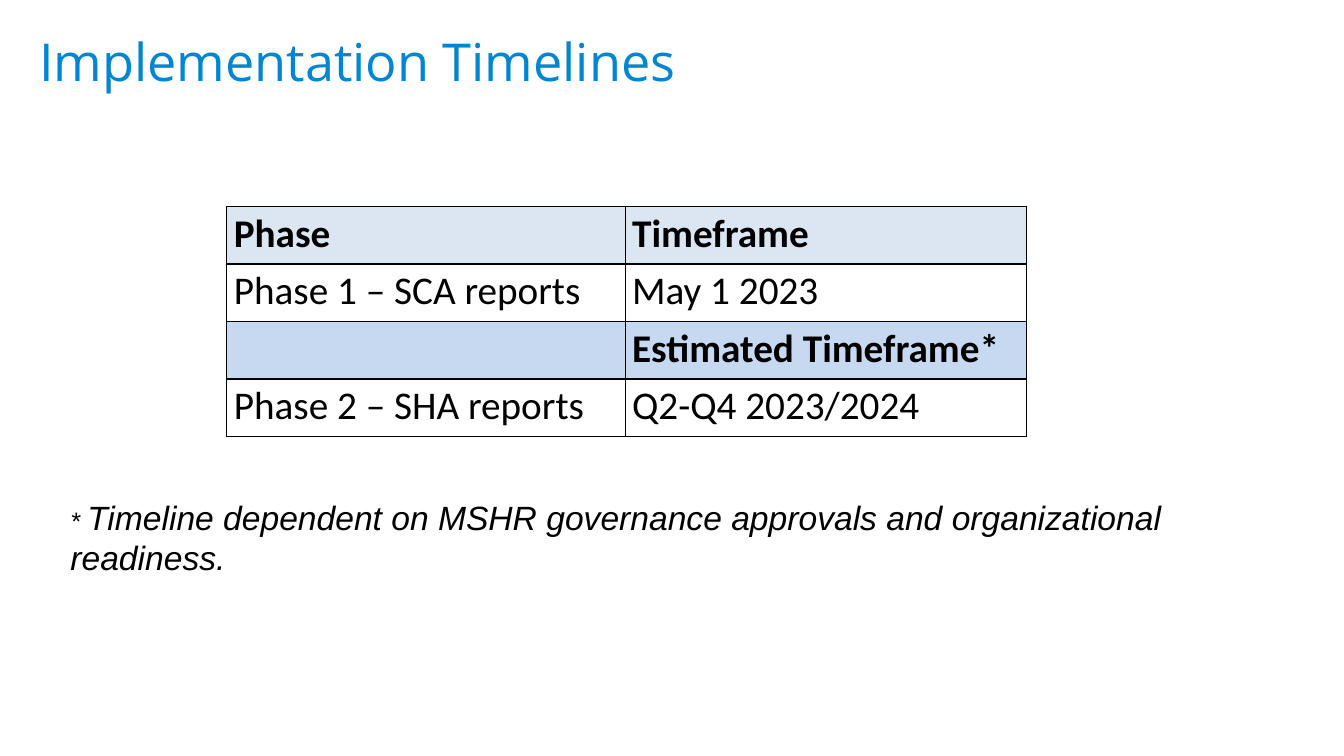
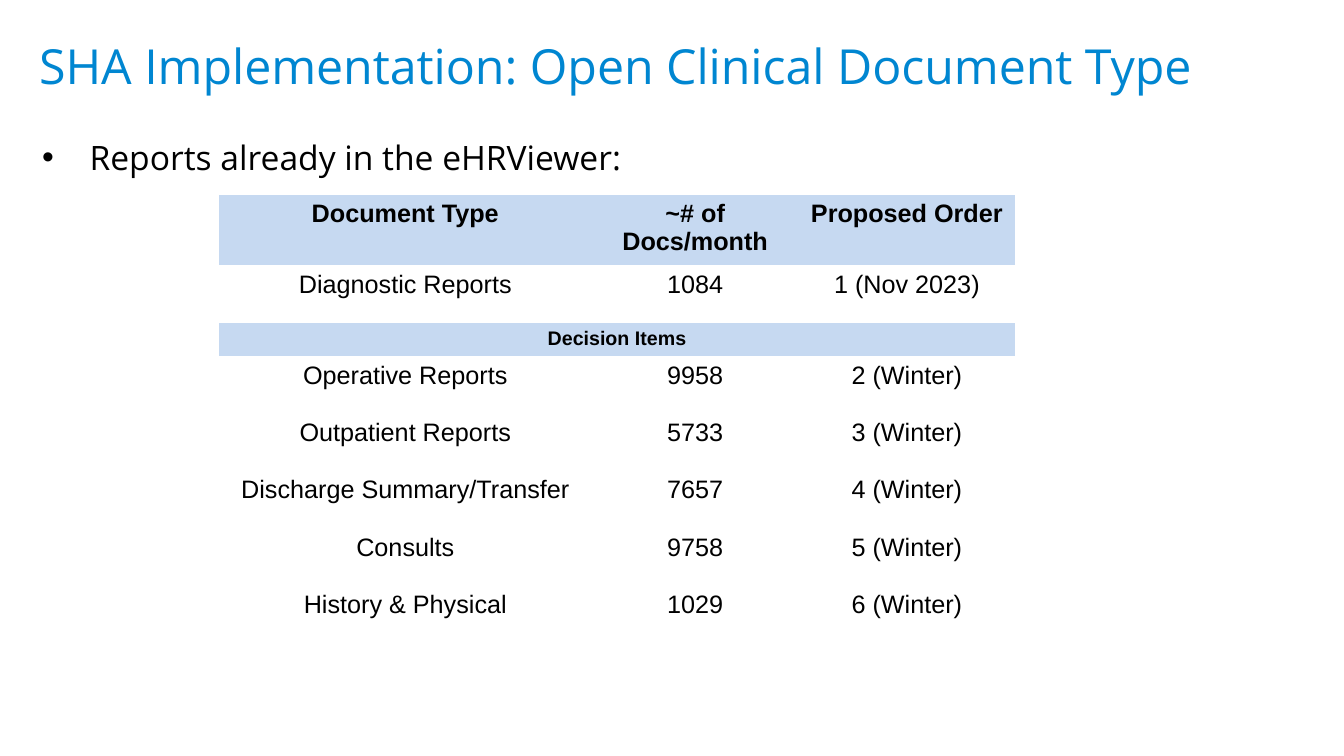
from dataclasses import dataclass

from lxml.etree import SubElement
from pptx import Presentation
from pptx.dml.color import RGBColor
from pptx.enum.text import MSO_ANCHOR as Anchor, PP_ALIGN as Align
from pptx.oxml.ns import qn
from pptx.util import Inches, Pt


@dataclass(frozen=True)
class Theme:
    """Colours, fonts and type sizes shared by the slides."""
    blue: str = "0086D1"
    black: str = "000000"
    pale: str = "DCE6F2"
    band: str = "C6D9F1"
    heading: str = "Open Sans"
    sans: str = "Arial"
    grid: str = "Calibri"
    body: float = 24
    phase: float = 28
    cell: float = 18
    section: float = 14


THEME = Theme()

PHASES = [
    ("Phase", "Timeframe"),
    ("Phase 1 – SCA reports", "May 1 2023"),
    ("", "Estimated Timeframe*"),
    ("Phase 2 – SHA reports", "Q2-Q4 2023/2024"),
]
PHASE_FILLS = {0: THEME.pale, 2: THEME.band}

DOCUMENTS = [
    ("Document Type", "~# of Docs/month", "Proposed Order"),
    ("Diagnostic Reports", "1084", "1 (Nov 2023)"),
    ("Decision Items",),
    ("Operative Reports", "9958", "2 (Winter)"),
    ("Outpatient Reports", "5733", "3 (Winter)"),
    ("Discharge Summary/Transfer", "7657", "4 (Winter)"),
    ("Consults", "9758", "5 (Winter)"),
    ("History & Physical", "1029", "6 (Winter)"),
]
DOCUMENT_FILLS = {0: THEME.band, 2: THEME.band}


def add_run(paragraph, text, size, face, color=THEME.black, bold=False, italic=False):
    """Append one formatted run."""
    run = paragraph.add_run()
    run.text = text
    font = run.font
    font.size, font.name, font.bold, font.italic = Pt(size), face, bold, italic
    font.color.rgb = RGBColor.from_string(color)


def add_text(slide, left, top, width, height, anchor=Anchor.TOP):
    """Add a wrapping text box and return its first paragraph."""
    frame = slide.shapes.add_textbox(*map(Inches, (left, top, width, height))).text_frame
    frame.word_wrap = True
    frame.vertical_anchor = anchor
    return frame.paragraphs[0]


def add_title(slide, text, size, spacing=1.0):
    """Add the slide title."""
    paragraph = add_text(slide, 0.29, 0.31, 12.72, 0.8)
    paragraph.line_spacing = spacing
    add_run(paragraph, text, size, THEME.heading, THEME.blue)


def add_bullet(slide, text):
    """Add the body text as a bullet with a hanging indent."""
    paragraph = add_text(slide, 0.29, 1.31, 12.72, 5.13)
    properties = paragraph._p.get_or_add_pPr()
    properties.set("marL", str(Inches(0.5)))
    properties.set("indent", str(Inches(-0.47)))
    SubElement(properties, qn("a:buFont"), typeface=THEME.sans)
    SubElement(properties, qn("a:buChar"), char="•")
    add_run(paragraph, text, THEME.body, THEME.heading)


def set_borders(cell, color):
    """Draw one-point cell borders, or none without a colour."""
    properties = cell._tc.get_or_add_tcPr()
    for position, side in enumerate(("lnL", "lnR", "lnT", "lnB")):
        line = SubElement(properties, qn(f"a:{side}"), w=str(Pt(1)))
        properties.insert(position, line)
        if color:
            fill = SubElement(line, qn("a:solidFill"))
            SubElement(fill, qn("a:srgbClr"), val=color)
        else:
            SubElement(line, qn("a:noFill"))


def style_cell(cell, fill, border):
    """Set the fill and borders of a cell."""
    if fill:
        cell.fill.solid()
        cell.fill.fore_color.rgb = RGBColor.from_string(fill)
    else:
        cell.fill.background()
    set_borders(cell, border)


def add_grid(slide, left, top, widths, heights, fills, border=None):
    """Add a table with filled header rows and return it."""
    box = map(Inches, (left, top, sum(widths), sum(heights)))
    table = slide.shapes.add_table(len(heights), len(widths), *box).table
    table.first_row = table.horz_banding = False
    for column, width in zip(table.columns, widths):
        column.width = Inches(width)
    for index, (row, height) in enumerate(zip(table.rows, heights)):
        row.height = Inches(height)
        for cell in row.cells:
            style_cell(cell, fills.get(index), border)
    return table


def add_phases(slide):
    """Add the table of phases and timeframes."""
    table = add_grid(slide, 2.25, 2.05, (3.95, 3.98), [0.57] * len(PHASES),
                     PHASE_FILLS, THEME.black)
    for r, values in enumerate(PHASES):
        for c, value in enumerate(values):
            cell = table.cell(r, c)
            cell.margin_left = cell.margin_right = Inches(0.07)
            cell.margin_top = cell.margin_bottom = 0
            paragraph = cell.text_frame.paragraphs[0]
            paragraph.line_spacing = 1.07
            if value:
                add_run(paragraph, value, THEME.phase, THEME.grid, bold=r in PHASE_FILLS)


def add_documents(slide):
    """Add the table of document types with its spanning section row."""
    heights = [0.67, 0.57, 0.28] + [0.57] * 5
    table = add_grid(slide, 2.17, 1.93, (3.7, 2.05, 2.15), heights, DOCUMENT_FILLS)
    for r, values in enumerate(DOCUMENTS):
        section = len(values) == 1
        if section:
            table.cell(r, 0).merge(table.cell(r, 2))
        for c, value in enumerate(values):
            paragraph = table.cell(r, c).text_frame.paragraphs[0]
            paragraph.alignment = Align.CENTER
            size = THEME.section if section else THEME.cell
            add_run(paragraph, value, size, THEME.sans, bold=r in DOCUMENT_FILLS)


def add_footnote(slide):
    """Add the note on the estimated timeframe."""
    paragraph = add_text(slide, 0.6, 4.93, 11.85, 0.8, Anchor.MIDDLE)
    add_run(paragraph, "* ", THEME.cell, THEME.sans, italic=True)
    add_run(paragraph, "Timeline dependent on MSHR governance approvals and "
            "organizational readiness.", THEME.body, THEME.sans, italic=True)


def main():
    """Build and save the two slides."""
    deck = Presentation()
    deck.slide_width, deck.slide_height = Inches(13.33), Inches(7.5)
    blank = deck.slide_layouts[6]

    timelines = deck.slides.add_slide(blank)
    add_title(timelines, "Implementation Timelines", 37.3, 0.9)
    add_phases(timelines)
    add_footnote(timelines)

    document_types = deck.slides.add_slide(blank)
    add_title(document_types, "SHA Implementation: Open Clinical Document Type", 34.5)
    add_bullet(document_types, "Reports already in the eHRViewer:")
    add_documents(document_types)

    deck.save("out.pptx")


if __name__ == "__main__":
    main()
